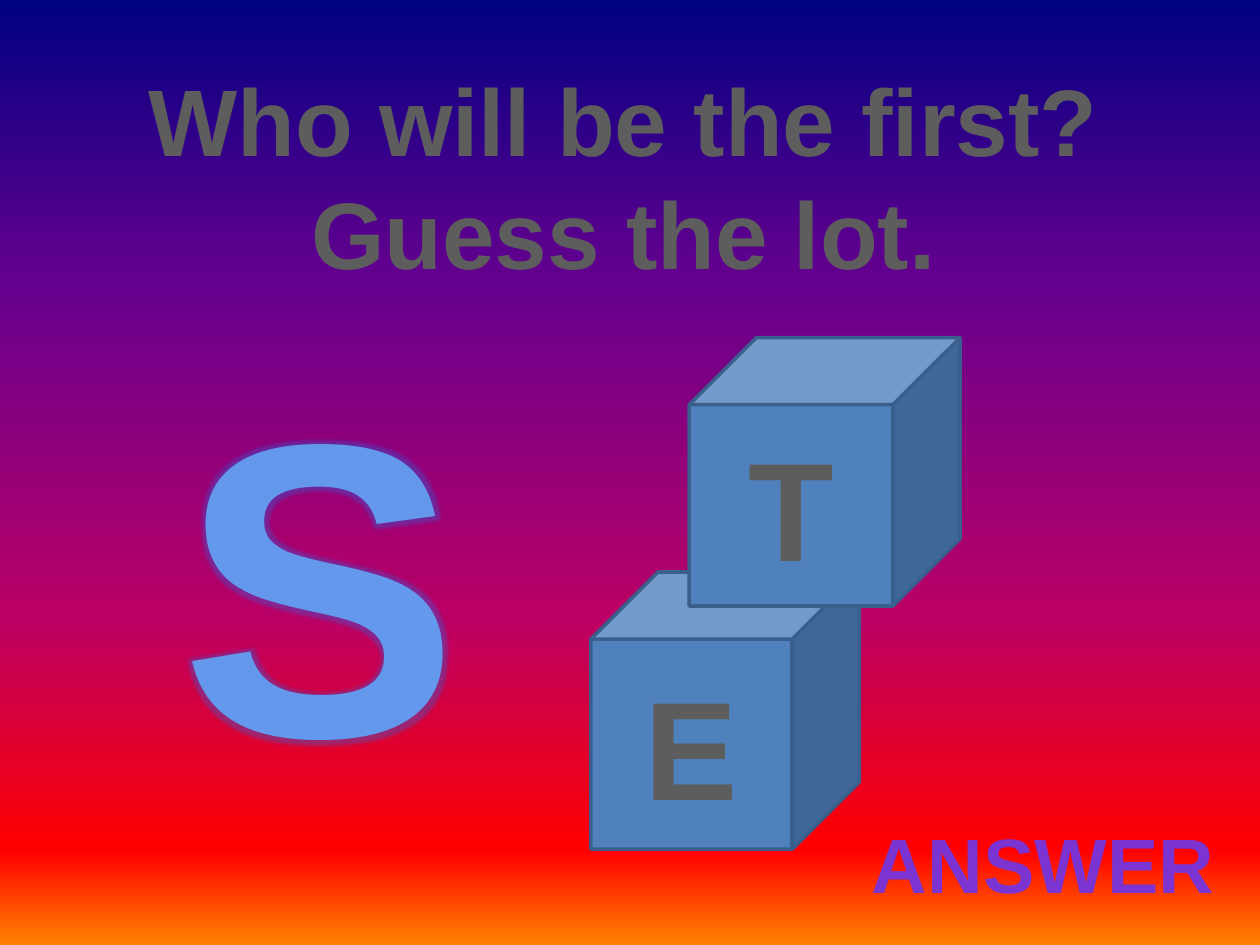
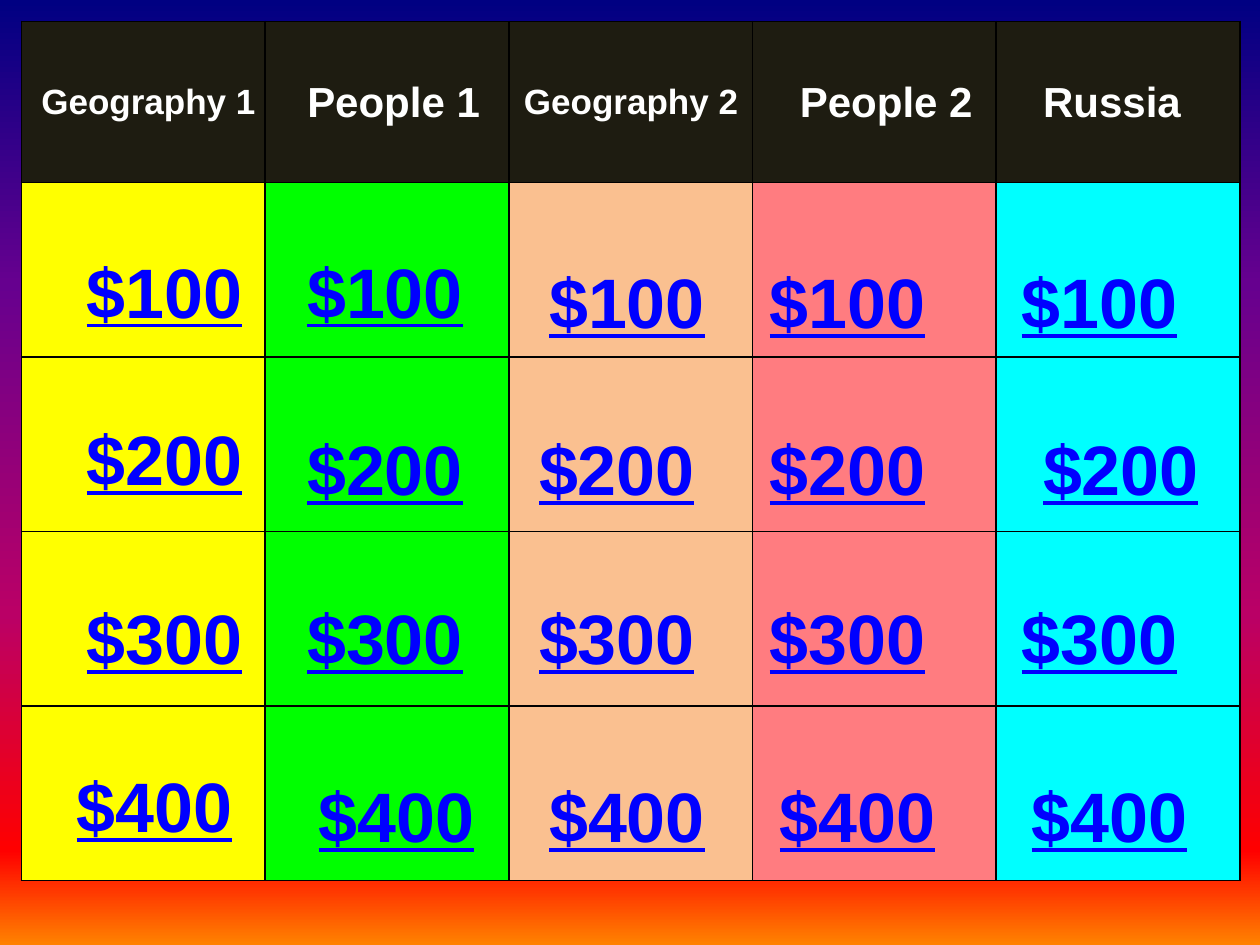
from typing import Any, NamedTuple

from lxml import etree
from pptx import Presentation
from pptx.dml.color import RGBColor
from pptx.enum import shapes, text
from pptx.oxml.ns import qn
from pptx.util import Inches, Pt

FONT = "Arial"
WHITE = RGBColor(0xFF, 0xFF, 0xFF)
BLACK = RGBColor(0x00, 0x00, 0x00)
GRAY = RGBColor(0x5D, 0x5D, 0x5D)
SKY = RGBColor(0x63, 0x98, 0xED)
PURPLE = RGBColor(0x7B, 0x34, 0xD2)
CUBE_FILL = RGBColor(0x4F, 0x81, 0xBD)
CUBE_LINE = RGBColor(0x3A, 0x5F, 0x8C)
GLOW = RGBColor(0x1F, 0x6F, 0xE5)
LINK = RGBColor(0x00, 0x00, 0xFF)
HEADER = RGBColor(0x1E, 0x1C, 0x11)
YELLOW = RGBColor(0xFF, 0xFF, 0x00)
GREEN = RGBColor(0x00, 0xFF, 0x00)
PEACH = RGBColor(0xFA, 0xC0, 0x90)
PINK = RGBColor(0xFF, 0x7C, 0x80)
CYAN = RGBColor(0x00, 0xFF, 0xFF)
SUNSET = {
    0: RGBColor(0x00, 0x00, 0x82),
    30: RGBColor(0x66, 0x00, 0x8F),
    65: RGBColor(0xBA, 0x00, 0x66),
    90: RGBColor(0xFF, 0x00, 0x00),
    100: RGBColor(0xFF, 0x82, 0x00),
}


class Box(NamedTuple):
    left: float
    top: float
    width: float
    height: float

    def emu(self) -> list[int]:
        return [Inches(v) for v in self]


class Category(NamedTuple):
    name: str
    color: RGBColor
    size: int
    name_box: Box
    lefts: tuple[float, ...]
    tops: tuple[float, ...]


class Cube(NamedTuple):
    letter: str
    box: Box


CUBES = [
    Cube("E", Box(4.69, 4.54, 2.13, 2.2)),
    Cube("T", Box(5.47, 2.68, 2.15, 2.13)),
]
LOW_TOPS = (2, 3.33, 4.67, 6.08)
CATEGORIES = [
    Category("Geography 1", YELLOW, 20, Box(0.23, 0.58, 1.95, 0.44),
             (0.58, 0.58, 0.58, 0.5), (1.92, 3.25, 4.67, 6)),
    Category("People 1", GREEN, 24, Box(2.34, 0.55, 1.58, 0.5),
             (2.33, 2.33, 2.33, 2.42), (1.92, 3.33, 4.67, 6.08)),
    Category("Geography 2", PEACH, 20, Box(4.06, 0.58, 1.95, 0.44),
             (4.25, 4.17, 4.17, 4.25), LOW_TOPS),
    Category("People 2", PINK, 24, Box(6.25, 0.55, 1.58, 0.5),
             (6, 6, 6, 6.08), LOW_TOPS),
    Category("Russia", CYAN, 24, Box(8.18, 0.55, 1.58, 0.5),
             (8, 8.17, 8, 8.08), LOW_TOPS),
]
PRIZES = ("$100", "$200", "$300", "$400")
BOARD = Box(0.17, 0.17, 9.67, 6.82)
HEADER_HEIGHT = 1.28


def add_color(parent: Any, color: RGBColor) -> Any:
    clr = etree.SubElement(parent, qn("a:srgbClr"))
    clr.set("val", str(color))
    return clr


def paint_master(prs: Any) -> None:
    master = prs.slide_master
    fill = master.background.fill
    fill.gradient()
    fill.gradient_angle = 270
    stops = next(master.element.iter(qn("a:gsLst")))
    for stop in list(stops):
        stops.remove(stop)
    for pos, color in SUNSET.items():
        stop = etree.SubElement(stops, qn("a:gs"))
        stop.set("pos", str(pos * 1000))
        add_color(stop, color)


def write(sp: Any, words: str, size: int, color: RGBColor, wrap: bool = False,
          align: Any = text.PP_ALIGN.CENTER, anchor: Any = text.MSO_ANCHOR.TOP,
          **extra: Any) -> Any:
    tf = sp.text_frame
    tf.word_wrap = wrap
    tf.vertical_anchor = anchor
    p = tf.paragraphs[0]
    p.alignment = align
    r = p.add_run()
    r.text = words
    look = {"name": FONT, "size": Pt(size), "bold": True, **extra}
    for key, value in look.items():
        setattr(r.font, key, value)
    r.font.color.rgb = color
    return r


def add_text(s: Any, box: Box, words: str, size: int, color: RGBColor, **extra: Any) -> Any:
    return write(s.shapes.add_textbox(*box.emu()), words, size, color, **extra)


def add_cube(s: Any, cube: Cube) -> None:
    sp = s.shapes.add_shape(shapes.MSO_SHAPE.CUBE, *cube.box.emu())
    sp.shadow.inherit = False
    sp.fill.solid()
    sp.fill.fore_color.rgb = CUBE_FILL
    sp.line.color.rgb = CUBE_LINE
    sp.line.width = Pt(2)
    write(sp, cube.letter, 80, GRAY, wrap=True, anchor=text.MSO_ANCHOR.MIDDLE)


def add_glow(r: Any) -> None:
    r_pr = r.font._element
    r_pr.set("spc", "300")
    effects = etree.Element(qn("a:effectLst"))
    r_pr.find(qn("a:solidFill")).addnext(effects)
    glow = etree.SubElement(effects, qn("a:glow"))
    glow.set("rad", "45500")
    alpha = etree.SubElement(add_color(glow, GLOW), qn("a:alpha"))
    alpha.set("val", "35000")


def style_cell(cell: Any, color: RGBColor) -> None:
    tc_pr = cell._tc.get_or_add_tcPr()
    for side in ("a:lnL", "a:lnR", "a:lnT", "a:lnB"):
        ln = etree.SubElement(tc_pr, qn(side))
        ln.set("w", str(Pt(1)))
        add_color(etree.SubElement(ln, qn("a:solidFill")), BLACK)
    cell.fill.solid()
    cell.fill.fore_color.rgb = color


def build_riddle(prs: Any) -> None:
    s = prs.slides.add_slide(prs.slide_layouts[5])
    title = s.shapes.title
    title.left, title.top, title.width, title.height = Box(0.91, 0.44, 8.08, 1.92).emu()
    write(title, "Who will be the first? Guess the lot.", 54, GRAY, wrap=True)
    for cube in CUBES:
        add_cube(s, cube)
    add_glow(add_text(s, Box(1.3, 2.48, 2.48, 4.12), "S", 239, SKY))
    add_text(s, Box(6.81, 6.43, 2.94, 0.84), "ANSWER", 44, PURPLE)


def build_board(prs: Any) -> None:
    s = prs.slides.add_slide(prs.slide_layouts[6])
    table = s.shapes.add_table(len(PRIZES) + 1, len(CATEGORIES), *BOARD.emu()).table
    table.first_row = table.horz_banding = False
    prize_height = (BOARD.height - HEADER_HEIGHT) / len(PRIZES)
    for i, row in enumerate(table.rows):
        row.height = Inches(prize_height if i else HEADER_HEIGHT)
        for cell, category in zip(row.cells, CATEGORIES):
            style_cell(cell, category.color if i else HEADER)
    for category in CATEGORIES:
        add_text(s, category.name_box, category.name, category.size, WHITE,
                 wrap=True, align=text.PP_ALIGN.LEFT)
        for prize, left, top in zip(PRIZES, category.lefts, category.tops):
            add_text(s, Box(left, top, 1.45, 0.77), prize, 40, LINK, underline=True)


def main() -> None:
    prs = Presentation()
    prs.slide_width, prs.slide_height = Inches(10), Inches(7.5)
    paint_master(prs)
    build_riddle(prs)
    build_board(prs)
    prs.save("out.pptx")


if __name__ == "__main__":
    main()
